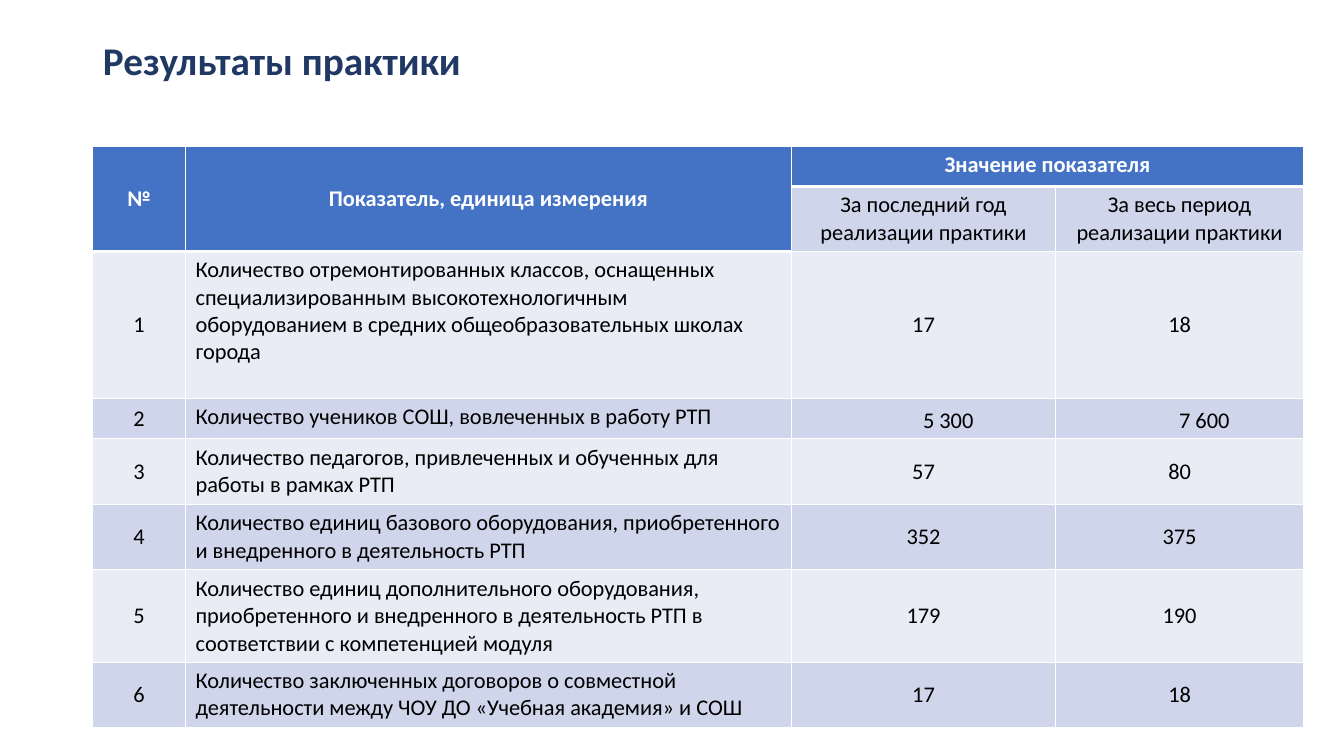
from lxml.etree import SubElement
from pptx import Presentation
from pptx.dml.color import RGBColor
from pptx.enum.text import MSO_ANCHOR as Anchor, MSO_AUTO_SIZE as AutoSize, PP_ALIGN as Align
from pptx.oxml.ns import qn
from pptx.util import Inches, Pt

# Content
TITLE = "Результаты практики"
HEADER = ["№", "Показатель, единица измерения", "Значение показателя", ""]
PERIODS = ["", "", "За последний год реализации практики", "За весь период реализации практики"]
RESULTS = [
    ("Количество отремонтированных классов, оснащенных специализированным высокотехнологичным "
     "оборудованием в средних общеобразовательных школах города", "17", "18"),
    ("Количество учеников СОШ, вовлеченных в работу РТП", "5 300", "7 600"),
    ("Количество педагогов, привлеченных и обученных для работы в рамках РТП", "57", "80"),
    ("Количество единиц базового оборудования, приобретенного и внедренного в деятельность РТП",
     "352", "375"),
    ("Количество единиц дополнительного оборудования, приобретенного и внедренного в "
     "деятельность РТП в соответствии с компетенцией модуля", "179", "190"),
    ("Количество заключенных договоров о совместной деятельности между ЧОУ ДО "
     "«Учебная академия» и СОШ", "17", "18"),
]
ROWS = [HEADER, PERIODS] + [[str(n), *result] for n, result in enumerate(RESULTS, 1)]

# Grid and colours
LEFT, TABLE_TOP = 0.92, 1.45
COLUMNS = [0.92, 6.01, 2.62, 2.46]
HEIGHTS = [0.4, 0.64, 1.46, 0.4, 0.65, 0.65, 0.9, 0.65]
NAVY, BLUE, WHITE, BLACK = "203864", "4472C4", "FFFFFF", "000000"
BANDS = ["E9EBF5", "CFD5EA"]
FONT = "Calibri"
INDENTED_ROW = 3


def color(value):
    return RGBColor.from_string(value)


def style(para, size, value, bold, align):
    para.alignment = align
    for span in para.runs:
        span.font.name, span.font.size, span.font.bold = FONT, Pt(size), bold
        span.font.color.rgb = color(value)


def add_borders(cell, bottom):
    properties = cell._tc.get_or_add_tcPr()
    for side, width in (("L", 1), ("R", 1), ("T", 1), ("B", bottom)):
        line = SubElement(properties, qn(f"a:ln{side}"), w=str(Pt(width)))
        SubElement(SubElement(line, qn("a:solidFill")), qn("a:srgbClr"), val=WHITE)


def format_cell(cell, row, column, text):
    header = row == 0 or (row == 1 and column < 2)
    add_borders(cell, 3 if header else 1)
    cell.fill.solid()
    cell.fill.fore_color.rgb = color(BLUE if header else BANDS[row % 2])
    if not text:
        return
    cell.text_frame.text = text
    para = cell.text_frame.paragraphs[0]
    description = row > 1 and column == 1
    top = description or (row < 2 and column > 1)
    cell.vertical_anchor = Anchor.TOP if top else Anchor.MIDDLE
    style(para, 16, WHITE if header else BLACK, header, Align.LEFT if description else Align.CENTER)
    if row == INDENTED_ROW and column > 1:
        cell.margin_left = cell.margin_right = Inches(0.07)
        cell.margin_top = cell.margin_bottom = 0
        para.line_spacing = 1.15
        para._p.get_or_add_pPr().set("indent", str(Inches(0.49)))


deck = Presentation()
deck.slide_width, deck.slide_height = Inches(13.33), Inches(7.5)
page = deck.slides.add_slide(deck.slide_layouts[5])

# Title
title = page.shapes.title
title.left, title.top, title.width, title.height = map(Inches, (LEFT, 0.22, 11.5, 0.81))
title.text_frame.text = TITLE
title.text_frame.auto_size = AutoSize.NONE
title.text_frame.vertical_anchor = Anchor.MIDDLE
title.text_frame.paragraphs[0].line_spacing = 0.9
style(title.text_frame.paragraphs[0], 28, NAVY, True, Align.LEFT)

# Results table
table = page.shapes.add_table(len(ROWS), len(COLUMNS), Inches(LEFT), Inches(TABLE_TOP),
                              Inches(sum(COLUMNS)), Inches(sum(HEIGHTS))).table
for column, width in zip(table.columns, COLUMNS):
    column.width = Inches(width)
for row, height in zip(table.rows, HEIGHTS):
    row.height = Inches(height)
for row, texts in enumerate(ROWS):
    for column, text in enumerate(texts):
        format_cell(table.cell(row, column), row, column, text)

# Merged header cells
for start, end in (((0, 0), (1, 0)), ((0, 1), (1, 1)), ((0, 2), (0, 3))):
    table.cell(*start).merge(table.cell(*end))

deck.save("out.pptx")
